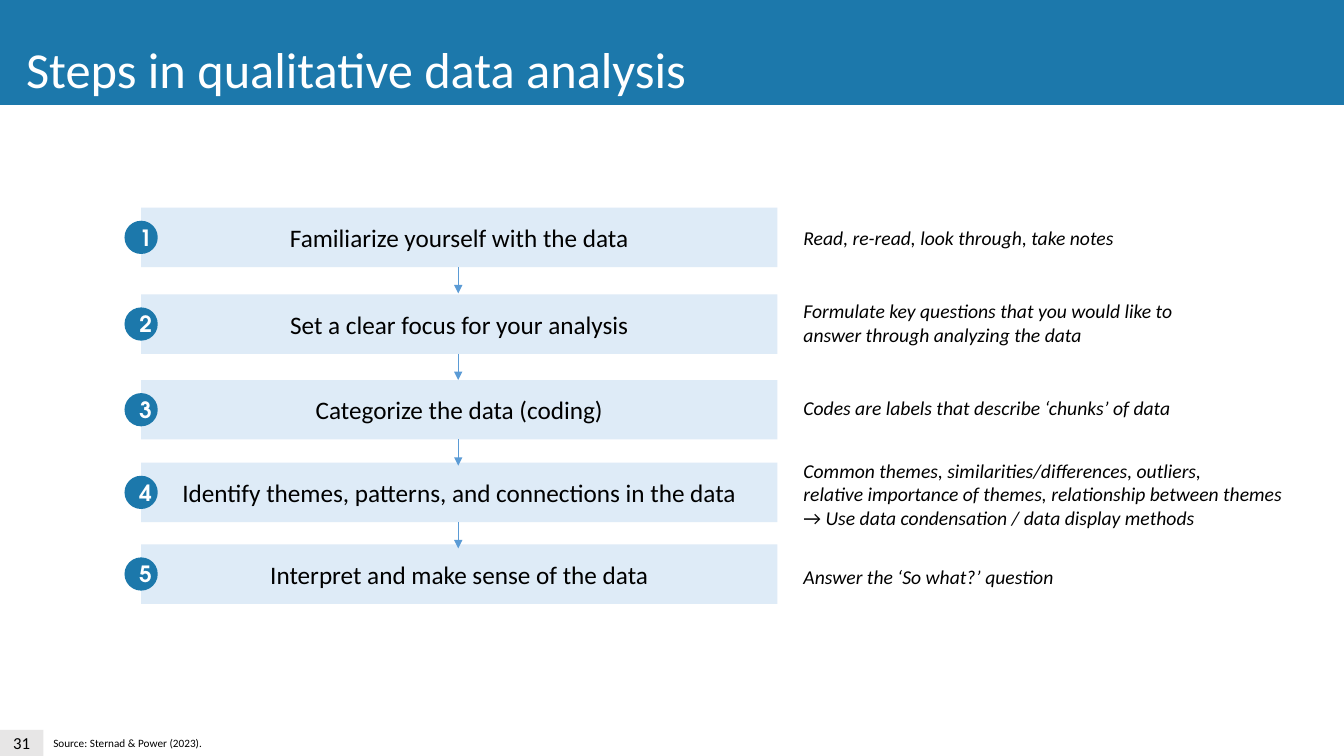
"""Build a slide with five linked steps of qualitative data analysis."""
import pptx
import pptx.util
import pptx.dml.color
import pptx.enum.shapes
import pptx.enum.text
import pptx.oxml
import pptx.oxml.ns
from dataclasses import dataclass

TITLE = "Steps in qualitative data analysis"
SOURCE = "Source: Sternad & Power (2023)."
PAGE = "31"
ARROW = "→ "
STEPS = [
    (206, "Familiarize yourself with the data", 219, 332,
     ["Read, re-read, look through, take notes"]),
    (292, "Set a clear focus for your analysis", 292, 389,
     ["Formulate key questions that you would like to",
      "answer through analyzing the data"]),
    (377, "Categorize the data (coding)", 388, 387,
     ["Codes are labels that describe ‘chunks’ of data"]),
    (459, "Identify themes, patterns, and connections in the data", 450, 505,
     ["Common themes, similarities/differences, outliers,",
      "relative importance of themes, relationship between themes",
      "→ Use data condensation / data display methods"]),
    (540, "Interpret and make sense of the data", 556, 275,
     ["Answer the ‘So what?’ question"]),
]


@dataclass
class Theme:
    blue: str = "1C78AB"
    pale: str = "DEEBF7"
    grey: str = "E7E6E6"
    line: str = "5B9BD5"
    ink: str = "000000"
    white: str = "FFFFFF"
    font: str = "Calibri"
    round: str = "TeX Gyre Adventor"
    title: int = 36
    step: int = 18
    badge: int = 16
    note: int = 14
    page: int = 12
    source: int = 8


THEME = Theme()
SCALE = 9144
WIDE, HIGH = 1333, 750
LEFT, WIDTH, TALL = 140, 631, 59
BADGE, GAP, NOTE = 33, 26, 787
KIND = pptx.enum.shapes.MSO_SHAPE
ALIGN = pptx.enum.text.PP_ALIGN


def px(*sizes):
    return [pptx.util.Emu(round(size * SCALE)) for size in sizes]


def color(code):
    return pptx.dml.color.RGBColor.from_string(code)


def style(frame, size, ink, font=THEME.font, bold=False, italic=False):
    for para in frame.paragraphs:
        for run in para.runs:
            face = run.font
            face.size = pptx.util.Pt(size)
            face.name = font
            face.color.rgb = color(ink)
            face.bold = bold
            face.italic = italic and run.text != ARROW


def block(shapes, kind, area, fill, text="", size=THEME.step, ink=THEME.ink, **look):
    shape = shapes.add_shape(kind, *px(*area))
    shape.shadow.inherit = False
    shape.fill.solid()
    shape.fill.fore_color.rgb = color(fill)
    shape.line.fill.background()
    if text:
        frame = shape.text_frame
        frame.text = text
        frame.vertical_anchor = pptx.enum.text.MSO_ANCHOR.MIDDLE
        frame.paragraphs[0].alignment = ALIGN.CENTER
        style(frame, size, ink, **look)


def label(shapes, area, lines, size, ink=THEME.ink, **look):
    frame = shapes.add_textbox(*px(*area)).text_frame
    frame.word_wrap = False
    frame.auto_size = pptx.enum.text.MSO_AUTO_SIZE.SHAPE_TO_FIT_TEXT
    for index, line in enumerate(lines):
        para = frame.add_paragraph() if index else frame.paragraphs[0]
        if line.startswith(ARROW):
            para.text = ARROW
            para.add_run().text = line.removeprefix(ARROW)
        else:
            para.text = line
    style(frame, size, ink, **look)


def arrow(shapes, x, top):
    link = shapes.add_connector(
        pptx.enum.shapes.MSO_CONNECTOR.STRAIGHT, *px(x, top, x, top + GAP))
    link.line.color.rgb = color(THEME.line)
    link.line.width = pptx.util.Pt(0.5)
    tail = pptx.oxml.parse_xml(
        "<a:tailEnd %s type='triangle'/>" % pptx.oxml.ns.nsdecls("a"))
    link.line._get_or_add_ln().append(tail)
    link._element.spPr.append(pptx.oxml.parse_xml(
        "<a:effectLst %s/>" % pptx.oxml.ns.nsdecls("a")))


def main():
    deck = pptx.Presentation()
    deck.slide_width, deck.slide_height = px(WIDE, HIGH)
    shapes = deck.slides.add_slide(deck.slide_layouts[6]).shapes
    block(shapes, KIND.RECTANGLE, (0, 724, 43, 26), THEME.grey, PAGE, THEME.page)
    for index, (top, step, high, wide, notes) in enumerate(STEPS):
        group = shapes.add_group_shape().shapes
        block(group, KIND.RECTANGLE, (LEFT, top, WIDTH, TALL), THEME.pale, step)
        block(group, KIND.OVAL,
              (LEFT - BADGE / 2, top + (TALL - BADGE) / 2, BADGE, BADGE),
              THEME.blue, str(index + 1), THEME.badge, THEME.white,
              font=THEME.round, bold=True)
        if index:
            arrow(group, LEFT + WIDTH / 2 - 1, STEPS[index - 1][0] + TALL)
        label(group, (NOTE, high, wide, 10 + 23.6 * len(notes)), notes,
              THEME.note, italic=True)
    block(shapes, KIND.RECTANGLE, (0, 0, WIDE, 104), THEME.blue)
    label(shapes, (16, 33, 681, 71), [TITLE], THEME.title, THEME.white)
    label(shapes, (43, 726, 169, 24), [SOURCE], THEME.source)
    deck.save("out.pptx")


if __name__ == "__main__":
    main()
